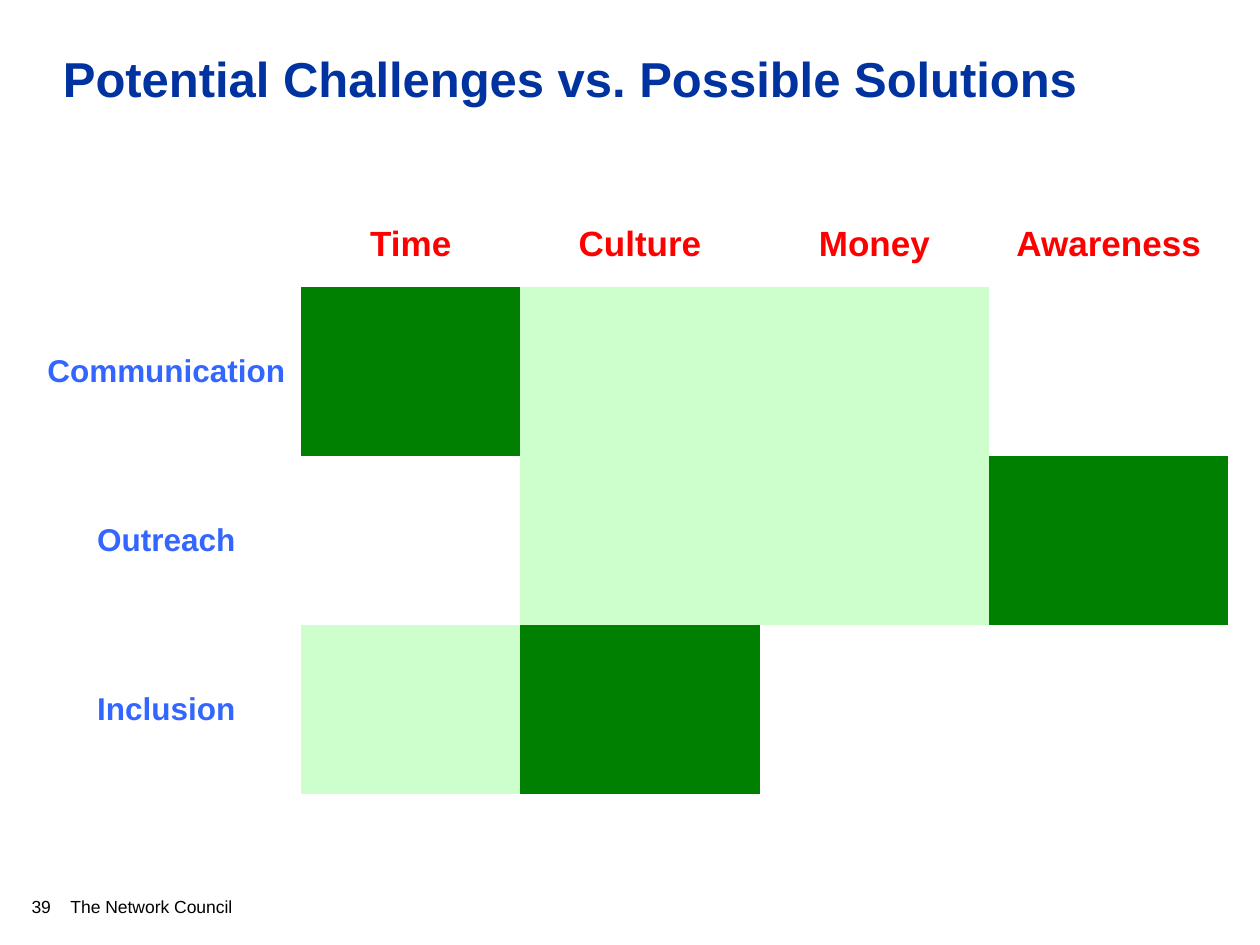
from pptx import Presentation
from pptx.dml.color import RGBColor
from pptx.enum.text import MSO_ANCHOR, PP_ALIGN
from pptx.util import Inches, Pt

TITLE = "Potential Challenges vs. Possible Solutions"
FOOTER = "The Network Council"
PAGE_NUMBER = "39"
CHALLENGES = ["Time", "Culture", "Money", "Awareness"]
SOLUTIONS = [
    ("Communication", ["strong", "partial", "partial", None]),
    ("Outreach", [None, "partial", "partial", "strong"]),
    ("Inclusion", ["partial", "strong", None, None]),
]
MATCH_COLOURS = {"strong": "008000", "partial": "CCFFCC"}
COLUMN_WIDTHS = [2.14, 1.74, 1.9, 1.82, 1.9]
HEADER_HEIGHT, ROW_HEIGHT = 0.68, 1.34
NO_STYLE_NO_GRID = "{2D5ABB26-0587-4C30-8999-92F81FD0307C}"


def colour(value):
    return RGBColor.from_string(value)


def format_text(frame, size, text_colour, bold=False):
    for paragraph in frame.paragraphs:
        for span in paragraph.runs:
            span.font.name = "Arial"
            span.font.size = Pt(size)
            span.font.bold = bold
            span.font.color.rgb = colour(text_colour)


def add_text(page, text, place, insets, size, text_colour, bold=False,
             wrap=False, anchor=MSO_ANCHOR.BOTTOM):
    box = page.shapes.add_textbox(*map(Inches, place))
    frame = box.text_frame
    frame.text = text
    frame.word_wrap = wrap
    frame.vertical_anchor = anchor
    (frame.margin_left, frame.margin_top,
     frame.margin_right, frame.margin_bottom) = map(Inches, insets)
    format_text(frame, size, text_colour, bold)
    return frame


def label_cell(cell, text, size, text_colour):
    cell.text_frame.text = text
    cell.vertical_anchor = MSO_ANCHOR.MIDDLE
    cell.text_frame.paragraphs[0].alignment = PP_ALIGN.CENTER
    format_text(cell.text_frame, size, text_colour, bold=True)


def add_matrix(page):
    heights = [HEADER_HEIGHT] + [ROW_HEIGHT] * len(SOLUTIONS)
    holder = page.shapes.add_table(
        len(heights), len(COLUMN_WIDTHS), Inches(0.25), Inches(1.6),
        Inches(sum(COLUMN_WIDTHS)), Inches(sum(heights)))
    table = holder.table
    table.first_row = table.horz_banding = False
    table._tbl.tblPr[0].text = NO_STYLE_NO_GRID
    for column, width in zip(table.columns, COLUMN_WIDTHS):
        column.width = Inches(width)
    for row, height in zip(table.rows, heights):
        row.height = Inches(height)
    for cell in table.iter_cells():
        cell.fill.background()

    for column, challenge in enumerate(CHALLENGES, 1):
        label_cell(table.cell(0, column), challenge, 20, "FF0000")
    for row, (solution, matches) in enumerate(SOLUTIONS, 1):
        label_cell(table.cell(row, 0), solution, 18, "3366FF")
        for column, match in enumerate(matches, 1):
            if match:
                fill = table.cell(row, column).fill
                fill.solid()
                fill.fore_color.rgb = colour(MATCH_COLOURS[match])


def main():
    deck = Presentation()
    deck.slide_width, deck.slide_height = Inches(10), Inches(7.5)
    page = deck.slides.add_slide(deck.slide_layouts[6])
    title = add_text(page, TITLE, (0.25, 0.25, 9.5, 1), (0.25, 0.2, 0.25, 0.25),
                     28, "0033A0", bold=True, wrap=True, anchor=MSO_ANCHOR.TOP)
    title.paragraphs[0].line_spacing = 0.9
    add_matrix(page)
    for text, place in [(FOOTER, (0.31, 7.03, 2, 0.47)),
                        (PAGE_NUMBER, (0, 7.02, 0.68, 0.48))]:
        add_text(page, text, place, (0.25, 0.05, 0.25, 0.22), 10, "000000")
    deck.save("out.pptx")


if __name__ == "__main__":
    main()
